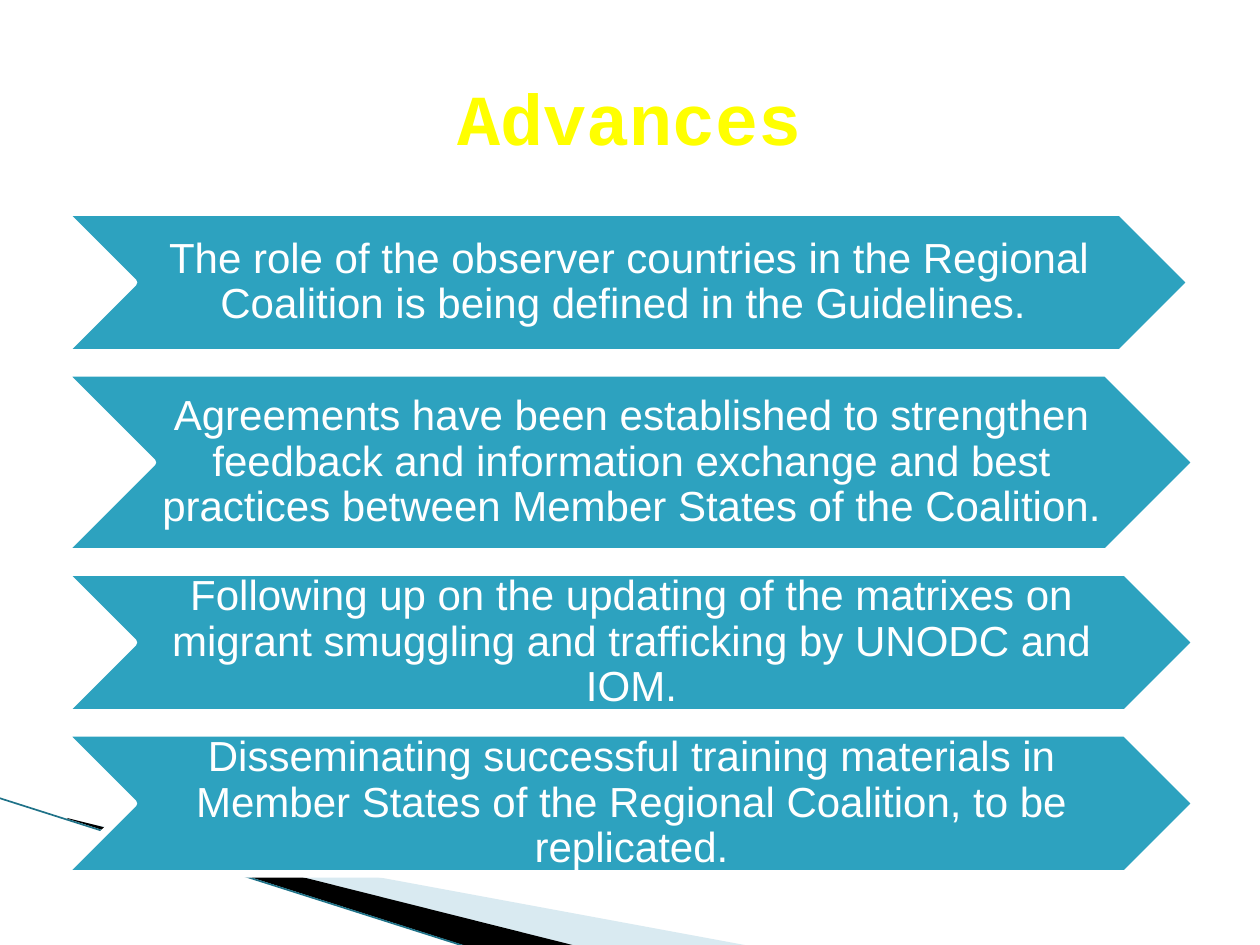
from dataclasses import dataclass

from lxml.etree import SubElement
from pptx import Presentation
from pptx.dml.color import RGBColor
from pptx.enum.shapes import MSO_CONNECTOR, MSO_SHAPE
from pptx.enum.text import MSO_ANCHOR, MSO_AUTO_SIZE, PP_ALIGN
from pptx.oxml.ns import qn
from pptx.util import Pt

SCALE = 914400 / 126  # EMU in one px


@dataclass(frozen=True)
class Theme:
    teal: str = "2DA2BF"
    edge: str = "1F7288"
    pale: str = "A0CBDC"
    black: str = "000000"
    white: str = "FFFFFF"
    yellow: str = "FFFF00"
    head: str = "Courier New"
    body: str = "Arial"
    head_size: int = 41
    body_size: int = 24


def px(*sizes):
    return [round(size * SCALE) for size in sizes]


def apply(item, values):
    for name, value in values.items():
        setattr(item, name, value)


class Maker:
    def __init__(self, slide, theme):
        self.slide, self.theme = slide, theme

    def paint(self, shape, color, alpha=None):
        shape.shadow.inherit = False
        shape.fill.solid()
        shape.fill.fore_color.rgb = RGBColor.from_string(color)
        if alpha:
            tint = shape._element.spPr.find(qn("a:solidFill"))[0]
            SubElement(tint, qn("a:alpha")).set("val", str(alpha * 1000))

    def stroke(self, shape, color, width):
        shape.line.color.rgb = RGBColor.from_string(color)
        shape.line.width = Pt(width)

    def letter(self, shape, text, color, frame, font, spacing=1.0):
        apply(shape.text_frame, dict(
            word_wrap=True, auto_size=MSO_AUTO_SIZE.NONE,
            vertical_anchor=MSO_ANCHOR.MIDDLE, **frame))
        para = shape.text_frame.paragraphs[0]
        apply(para, dict(alignment=PP_ALIGN.CENTER, line_spacing=spacing))
        run = para.add_run()
        run.text = text
        apply(run.font, font)
        run.font.color.rgb = RGBColor.from_string(color)

    def title(self, text, *box):
        shape = self.slide.shapes.title
        apply(shape, dict(zip(("left", "top", "width", "height"), px(*box))))
        self.letter(shape, text, self.theme.yellow, {}, dict(
            name=self.theme.head, size=Pt(self.theme.head_size), bold=True))

    def wedge(self, points, color, alpha=None):
        start, *rest = points
        form = self.slide.shapes.build_freeform(*start, scale=SCALE)
        form.add_line_segments(rest, close=True)
        shape = form.convert_to_shape()
        self.paint(shape, color, alpha)
        shape.line.fill.background()

    def line(self, *ends):
        shape = self.slide.shapes.add_connector(
            MSO_CONNECTOR.STRAIGHT, *px(*ends))
        self.stroke(shape, self.theme.edge, 0.95)
        SubElement(shape._element.spPr, qn("a:effectLst"))

    def arrow(self, text, left, top, width, height):
        shapes, theme = self.slide.shapes, self.theme
        shape = shapes.add_shape(
            MSO_SHAPE.CHEVRON, *px(left, top, width, height))
        self.paint(shape, theme.teal)
        self.stroke(shape, theme.white, 4.33)
        # The label lies between the notch and the tip
        label = shapes.add_textbox(
            *px(left + height / 2, top, width - height, height))
        side, edge = px(4, 2)
        self.letter(label, text, theme.white, dict(
            margin_left=side, margin_right=0,
            margin_top=edge, margin_bottom=edge),
            dict(name=theme.body, size=Pt(theme.body_size)), 0.9)


def main():
    deck = Presentation()
    deck.slide_width, deck.slide_height = px(1260, 945)
    theme = Theme()
    make = Maker(deck.slides.add_slide(deck.slide_layouts[5]), theme)

    # Corner wedges
    make.wedge([(69, 820), (750, 946), (575, 946), (69, 819)], theme.pale, 40)
    make.wedge([(67, 818), (576, 946), (469, 947), (68, 819)], theme.black)
    make.line(-1, 798, 467, 947)

    # Stack of arrows: text, width, height
    rows = [
        ("The role of the observer countries in the Regional Coalition "
         "is being defined in the Guidelines. ", 1128, 141),
        ("Agreements have been established to strengthen feedback and "
         "information exchange and best practices between Member States "
         "of the Coalition.", 1133, 179),
        ("Following up on the updating of the matrixes on migrant "
         "smuggling and trafficking by UNODC and IOM.", 1133, 141),
        ("Disseminating successful training materials in Member States "
         "of the Regional Coalition, to be replicated.", 1133, 141),
    ]
    top, gap = 212, 20
    for text, width, height in rows:
        make.arrow(text, 63, top, width, height)
        top += height + gap

    # Title
    make.title("Advances", 63, 38, 1134, 158)
    deck.save("out.pptx")


if __name__ == "__main__":
    main()
